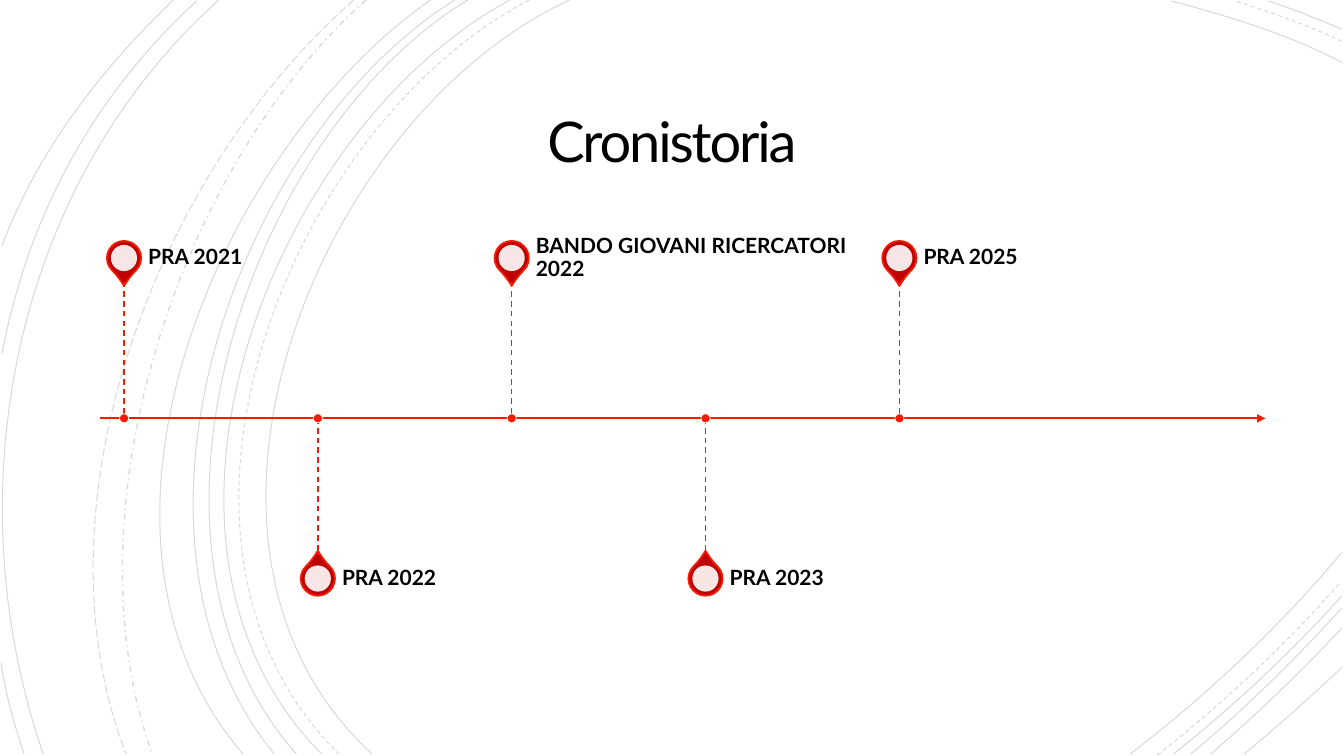
"""Build the "Cronistoria" timeline slide with its arc background."""
import pptx
import pptx.dml.color
import pptx.enum.dml
import pptx.enum.shapes
import pptx.enum.text
import pptx.oxml
import pptx.oxml.ns
import pptx.util
from pptx.util import Inches, Pt

RGBColor = pptx.dml.color.RGBColor
DASH = pptx.enum.dml.MSO_LINE
SHAPE = pptx.enum.shapes.MSO_SHAPE
STRAIGHT = pptx.enum.shapes.MSO_CONNECTOR.STRAIGHT
MIDDLE = pptx.enum.text.MSO_ANCHOR.MIDDLE
ALIGN = pptx.enum.text.PP_ALIGN
qn = pptx.oxml.ns.qn

BLACK = RGBColor(0x00, 0x00, 0x00)
WHITE = RGBColor(0xFF, 0xFF, 0xFF)
RED = RGBColor(0xF8, 0x1B, 0x02)
DARK_RED = RGBColor(0xC0, 0x00, 0x00)

TITLE = "Cronistoria"
MILESTONES = ["PRA 2021", "PRA 2022", "BANDO GIOVANI RICERCATORI 2022",
              "PRA 2023", "PRA 2025"]

ARCS = [
    (DASH.SOLID, 0.75, [
        [(5.65, 0), (3.15, 1.15), (1.43, 5.4), (3.69, 7.48)],
        [(13.31, 0.62), (12.78, 0.34), (12.18, 0.16), (11.62, 0.01)],
        [(11.21, 7.48), (11.97, 6.9), (12.69, 6.22), (13.31, 5.48)],
        [(5.06, 0), (2.7, 1.27), (1.1, 5.37), (3.19, 7.48)],
        [(13.31, 0.29), (13.07, 0.19), (12.83, 0.09), (12.58, 0.01)],
        [(11.64, 7.48), (12.23, 7.01), (12.8, 6.48), (13.31, 5.91)],
        [(4.64, 0), (2.44, 1.33), (1.1, 5.41), (2.94, 7.48)],
        [(11.81, 7.48), (12.34, 7.04), (12.84, 6.55), (13.31, 6.03)],
        [(4.51, 0), (2.31, 1.38), (0.97, 5.33), (2.72, 7.48)],
        [(12.01, 7.48), (12.46, 7.09), (12.9, 6.67), (13.31, 6.23)],
        [(4.27, 0), (2.17, 1.47), (0.53, 5.29), (2.41, 7.48)],
        [(12.34, 7.48), (12.67, 7.21), (12.99, 6.92), (13.31, 6.62)],
        [(2.17, 0), (0.11, 1.85), (-0.46, 4.9), (0.43, 7.48)],
        [(1.95, 0.01), (0.92, 0.96), (0.28, 2.14), (0.02, 3.51)],
        [(0.01, 6.58), (0.06, 6.89), (0.14, 7.19), (0.24, 7.48)],
        [(1.72, 0), (1, 0.69), (0.37, 1.5), (0.02, 2.44)],
    ]),
    (DASH.DASH, 0.75, [
        [(5.25, 0), (2.85, 1.25), (1.23, 5.37), (3.36, 7.48)],
        [(13.31, 0.41), (12.97, 0.25), (12.6, 0.12), (12.25, 0.01)],
        [(11.48, 7.49), (12.13, 6.98), (12.75, 6.4), (13.3, 5.77)],
    ]),
    (DASH.DASH_DOT, 1, [
        [(3.63, 0), (1.76, 1.66), (0.65, 5.09), (1.51, 7.48)],
    ]),
    (DASH.LONG_DASH, 0.75, [
        [(3.51, 0), (1.57, 1.69), (0.29, 4.99), (1.25, 7.48)],
    ]),
]
ARC_OPACITY, DISC_OPACITY = 15, 90

AXIS_LEFT, AXIS_RIGHT, AXIS_Y = 0.99, 12.55, 4.15
FIRST_X, LAST_X = 1.23, 8.92
PIN_OFFSET = 1.59
PIN, DISC, DOT = 0.34, 0.26, 0.09
LABEL_GAP, LABEL_WIDTH, LABEL_HEIGHT = 0.24, 3.2, 0.47

TITLE_FORMAT = {"name": "Lato", "size": Pt(40)}
LABEL_FORMAT = {"name": "Lato", "size": Pt(15), "bold": True}
TITLE_INSETS = (0.25, 0.25, 0.25, 0.25)
LABEL_INSETS = (0, 0, 0.1, 0)


def set_opacity(properties, percent):
    color = properties.find(".//" + qn("a:srgbClr"))
    alpha = pptx.oxml.ns.nsdecls("a")
    color.append(pptx.oxml.parse_xml(f'<a:alpha {alpha} val="{percent * 1000}"/>'))


def style_line(line, color, width, dash=DASH.SOLID):
    line.color.rgb = color
    for attribute, value in {"width": Pt(width), "dash_style": dash}.items():
        setattr(line, attribute, value)


def add_arc(slide, points, dash, width):
    corners = [(Inches(x), Inches(y)) for x, y in points]
    builder = slide.shapes.build_freeform(*corners[0])
    builder.add_line_segments(corners[1:], close=False)
    arc = builder.convert_to_shape()
    arc.shadow.inherit = False
    arc.fill.background()
    style_line(arc.line, BLACK, width, dash)
    set_opacity(arc.line._get_or_add_ln(), ARC_OPACITY)
    outline = arc._element.find(".//" + qn("a:path"))
    curve = outline.makeelement(qn("a:cubicBezTo"), {})
    for segment in outline.findall(qn("a:lnTo")):
        curve.append(segment[0])
        outline.remove(segment)
    outline.append(curve)


def add_line(slide, start, end, width, dash=DASH.SOLID):
    line = slide.shapes.add_connector(STRAIGHT, *map(Inches, start + end))
    style_line(line.line, RED, width, dash)
    properties = line._element.spPr
    properties.append(properties.makeelement(qn("a:effectLst"), {}))
    return line


def add_round(slide, kind, x, y, size, fill, outline=None, width=0):
    mark = slide.shapes.add_shape(kind, Inches(x - size / 2), Inches(y - size / 2),
                                  Inches(size), Inches(size))
    mark.shadow.inherit = False
    mark.fill.solid()
    mark.fill.fore_color.rgb = fill
    if outline is None:
        mark.line.fill.background()
    else:
        style_line(mark.line, outline, width)
    return mark


def add_text(slide, place, text, insets, font, align, spacing):
    box = slide.shapes.add_textbox(*map(Inches, place))
    frame = box.text_frame
    left, top, right, bottom = map(Inches, insets)
    settings = {"word_wrap": True, "vertical_anchor": MIDDLE, "margin_left": left,
                "margin_top": top, "margin_right": right, "margin_bottom": bottom}
    for attribute, value in settings.items():
        setattr(frame, attribute, value)
    paragraph = frame.paragraphs[0]
    paragraph.alignment = align
    paragraph.line_spacing = spacing
    run = paragraph.add_run()
    run.text = text
    for attribute, value in font.items():
        setattr(run.font, attribute, value)
    run.font.color.rgb = BLACK
    return run


def add_milestone(slide, index, text):
    x = FIRST_X + index * (LAST_X - FIRST_X) / (len(MILESTONES) - 1)
    above = index % 2 == 0
    side = -1 if above else 1
    pin_y = AXIS_Y + side * PIN_OFFSET
    stem_y = pin_y - side * LABEL_HEIGHT / 2
    pin = add_round(slide, SHAPE.TEAR, x, pin_y, PIN, DARK_RED, RED, 1.25)
    pin.adjustments[0] = 1.15
    pin.rotation = 135 if above else 315
    disc = add_round(slide, SHAPE.OVAL, x, pin_y, DISC, WHITE)
    set_opacity(disc._element.spPr, DISC_OPACITY)
    place = (x + LABEL_GAP, pin_y - LABEL_HEIGHT / 2, LABEL_WIDTH, LABEL_HEIGHT)
    add_text(slide, place, text, LABEL_INSETS, LABEL_FORMAT, ALIGN.LEFT, 0.9)
    top, bottom = sorted((stem_y, AXIS_Y))
    add_line(slide, (x, top), (x, bottom), 1, DASH.DASH)
    add_round(slide, SHAPE.OVAL, x, AXIS_Y, DOT, RED, WHITE, 0.5)


def main():
    deck = pptx.Presentation()
    deck.slide_width, deck.slide_height = Inches(13.33), Inches(7.5)
    slide = deck.slides.add_slide(deck.slide_layouts[6])
    for dash, width, curves in ARCS:
        for points in curves:
            add_arc(slide, points, dash, width)
    title = add_text(slide, (1.92, 0.87, 9.49, 1.15), TITLE, TITLE_INSETS,
                     TITLE_FORMAT, ALIGN.CENTER, 0.85)
    title.font._element.set("spc", "-150")
    axis = add_line(slide, (AXIS_LEFT, AXIS_Y), (AXIS_RIGHT, AXIS_Y), 1.5)
    stroke = axis.line._get_or_add_ln()
    stroke.append(stroke.makeelement(qn("a:tailEnd"), {"type": "triangle"}))
    for index, text in enumerate(MILESTONES):
        add_milestone(slide, index, text)
    deck.save("out.pptx")


if __name__ == "__main__":
    main()
